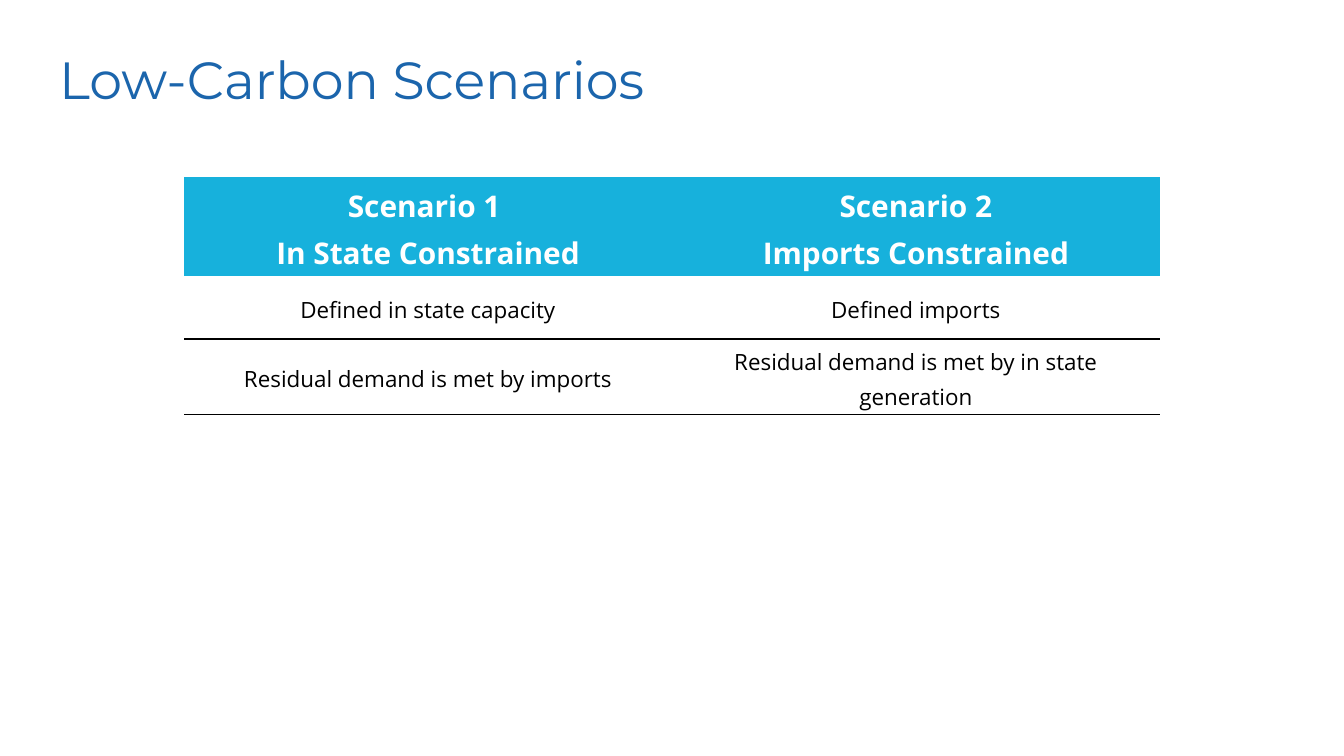
from copy import deepcopy

from lxml.etree import SubElement
from pptx import Presentation
from pptx.dml.color import RGBColor
from pptx.enum.text import MSO_ANCHOR as Anchor, PP_ALIGN as Align
from pptx.oxml.ns import qn
from pptx.util import Inches, Pt

WHITE, BLACK, BLUE, CYAN = "FFFFFF", "000000", "1B65AC", "17B1DC"
PLAIN = "{2D5ABB26-0587-4C30-8999-92F81FD0307C}"
ROWS = [
    ("Scenario 1 \nIn State Constrained", "Scenario 2\nImports Constrained"),
    ("Defined in state capacity", "Defined imports"),
    ("Residual demand is met by imports",
     "Residual demand is met by in state generation"),
]
HEIGHTS = [0.58, 0.47, 0.49]
WIDTH = 3.63


def color(code):
    return RGBColor.from_string(code)


def write(frame, text, size=12, font="Open Sans", ink=BLACK, bold=False,
          align=Align.CENTER, space=1.15):
    para = frame.paragraphs[0]
    para.text = text
    para.alignment = align
    para.line_spacing = space
    for run in para.runs:
        run.font.size = Pt(size)
        run.font.name = font
        run.font.bold = bold
        run.font.color.rgb = color(ink)
    for gap in para._p.findall(qn("a:br")):
        gap.append(deepcopy(para.runs[0]._r.rPr))


def edge(cell, side, ink=BLACK, width=0.75):
    line = SubElement(cell._tc.get_or_add_tcPr(), qn(f"a:ln{side}"),
                      w=str(Pt(width)))
    fill = SubElement(line, qn("a:solidFill"))
    SubElement(fill, qn("a:srgbClr"), val=ink)


class Deck:
    def __init__(self, wide):
        self.show = Presentation()
        self.show.slide_width = Inches(wide)
        self.show.slide_height = Inches(wide * 9 / 16)
        self.slide = self.show.slides.add_slide(self.show.slide_layouts[5])
        back = self.slide.background.fill
        back.solid()
        back.fore_color.rgb = color(WHITE)

    def title(self, text, left, top, width, height):
        shape = self.slide.shapes.title
        shape.left, shape.top = Inches(left), Inches(top)
        shape.width, shape.height = Inches(width), Inches(height)
        frame = shape.text_frame
        frame.margin_left = frame.margin_right = Inches(0.1)
        frame.margin_top = frame.margin_bottom = Inches(0.1)
        frame.vertical_anchor = Anchor.TOP
        frame.word_wrap = True
        write(frame, text, size=28, font="Montserrat", ink=BLUE,
              align=Align.LEFT, space=1.0)

    def table(self, rows, left, top, width, heights):
        count = len(rows[0])
        shape = self.slide.shapes.add_table(
            len(rows), count, Inches(left), Inches(top),
            Inches(width * count), Inches(sum(heights)))
        grid = shape.table
        grid._tbl.tblPr.find(qn("a:tableStyleId")).text = PLAIN
        grid.horz_banding = False
        for col in grid.columns:
            col.width = Inches(width)
        for r, texts in enumerate(rows):
            grid.rows[r].height = Inches(heights[r])
            for c, text in enumerate(texts):
                self.cell(grid.cell(r, c), text, r)

    def cell(self, cell, text, row):
        cell.vertical_anchor = Anchor.MIDDLE
        cell.margin_left = cell.margin_right = Inches(0.03)
        cell.margin_top = cell.margin_bottom = Inches(0.02)
        if row == 0:
            cell.fill.solid()
            cell.fill.fore_color.rgb = color(CYAN)
            write(cell.text_frame, text, size=16, ink=WHITE, bold=True)
            return
        if row > 1:
            edge(cell, "T")
        edge(cell, "B")
        cell.fill.background()
        write(cell.text_frame, text)

    def save(self):
        self.show.save("out.pptx")


def main():
    deck = Deck(10)
    deck.table(ROWS, 1.37, 1.32, WIDTH, HEIGHTS)
    deck.title("Low-Carbon Scenarios", 0.34, 0.25, 9.14, 0.63)
    deck.save()


if __name__ == "__main__":
    main()
